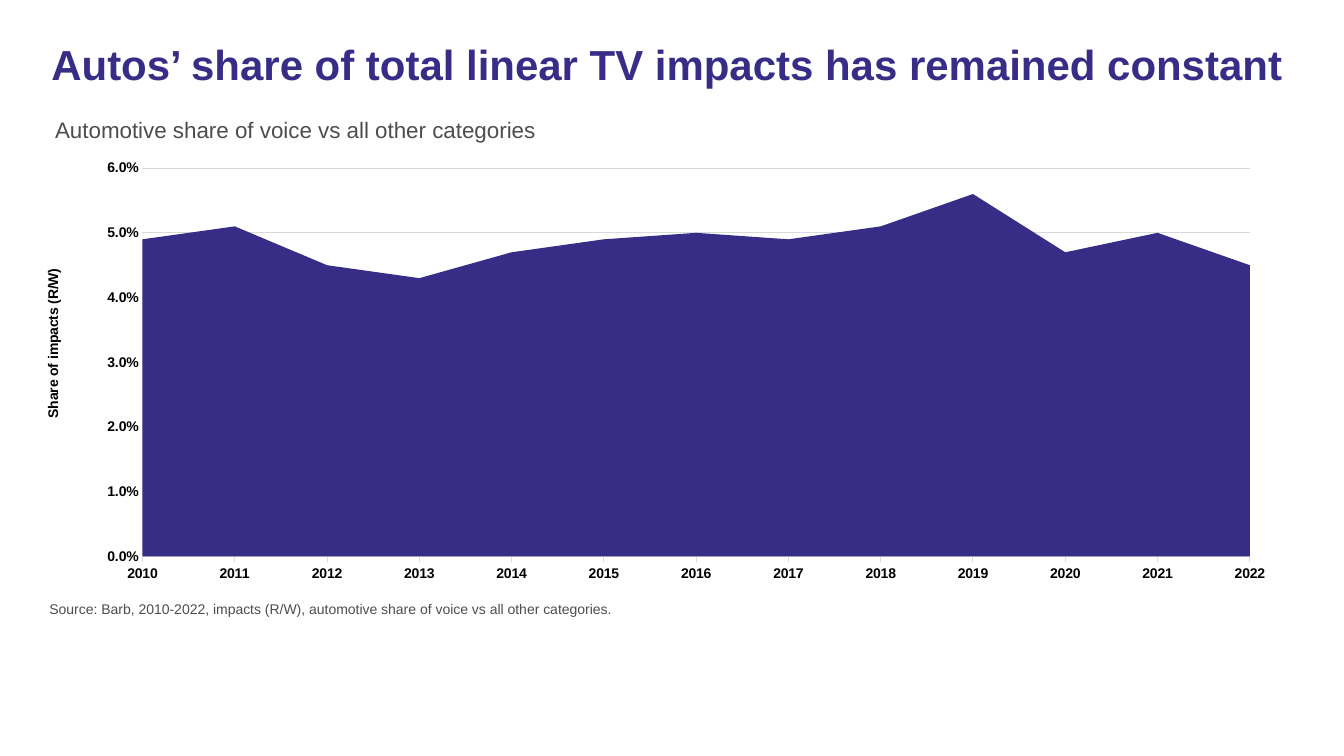
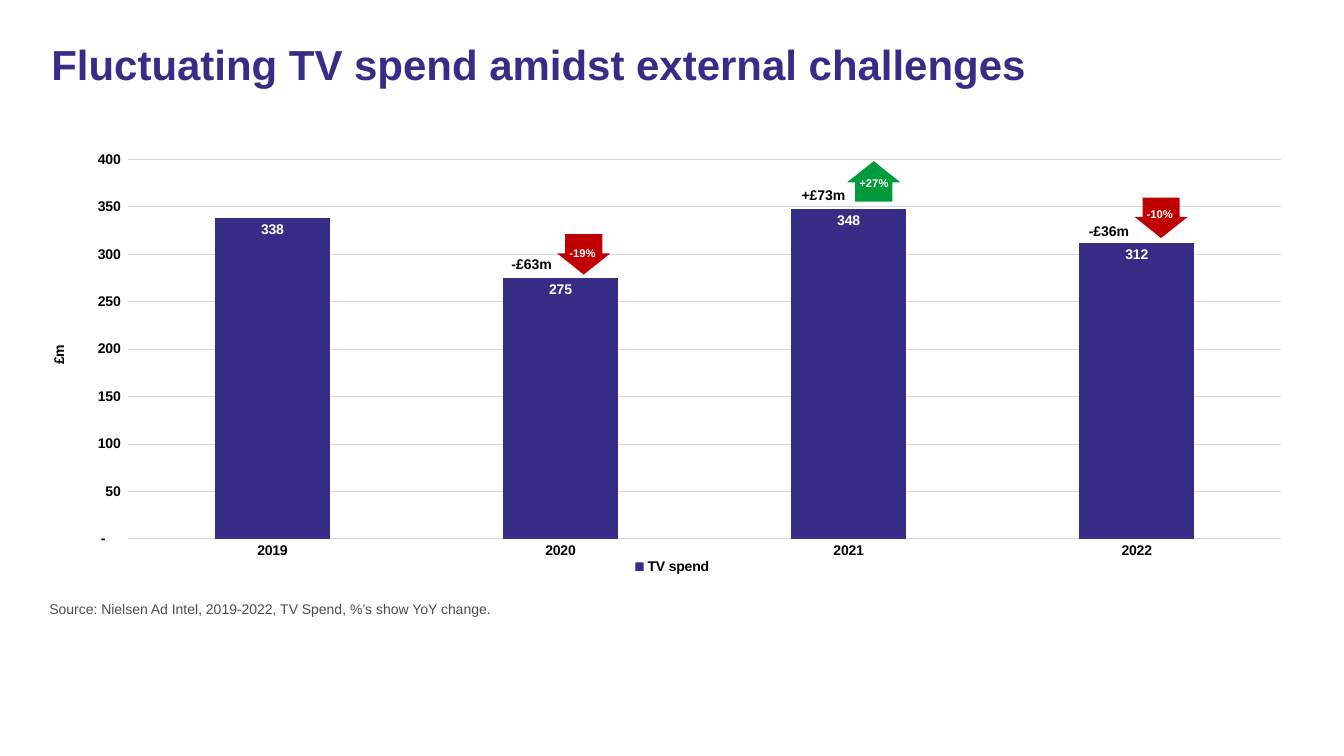
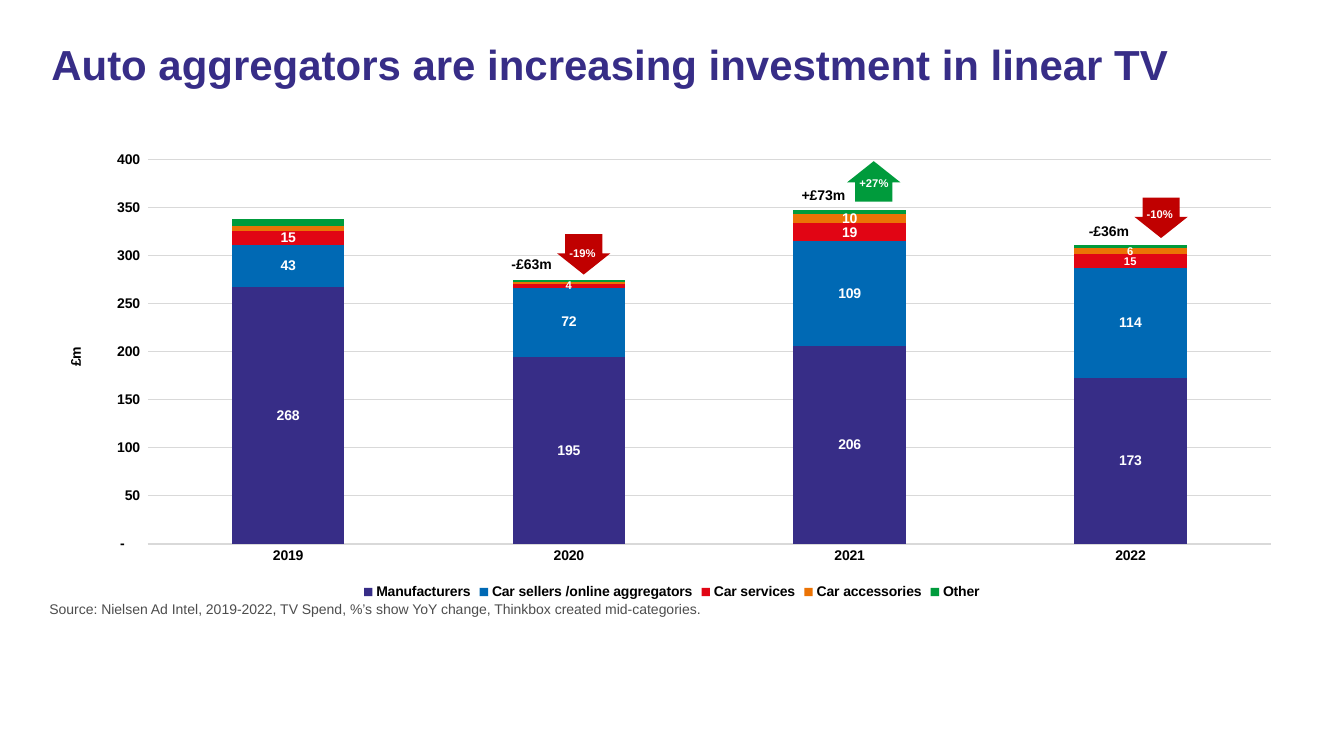
import pptx
import pptx.util
import pptx.chart.data
import pptx.dml.color
import pptx.enum.chart
import pptx.enum.shapes
import pptx.enum.text
import pptx.oxml
import pptx.oxml.ns

Cm, Pt = pptx.util.Cm, pptx.util.Pt
RGB = pptx.dml.color.RGBColor.from_string
KIND = pptx.enum.chart.XL_CHART_TYPE
SPOT = pptx.enum.chart.XL_LABEL_POSITION
TICK = pptx.enum.chart.XL_TICK_MARK


class Theme:
    face = "Arial"
    navy, blue, red, orange, green = "372D87", "0069B4", "E10514", "EB7305", "009B3C"
    fall, grey, rule, black, white = "C00000", "4D4D4D", "D9D9D9", "000000", "FFFFFF"
    title, sub, small, tiny = 30, 16, 10, 8


# Content: boxes in cm, plot area and axis title in percent of the chart
MONEY = r'_-* #,##0_-;\-* #,##0_-;_-* "-"??_-;_-@_'
YEARS = ["2019", "2020", "2021", "2022"]
# amount, share, arrow left, arrow top, amount top, share top
MOVES = [
    ("-£63m", "-19%", 14.1, 5.92, 6.32, 6.07),
    ("+£73m", "+27%", 21.41, 4.09, 4.57, 4.32),
    ("-£36m", "-10%", 28.65, 5, 5.49, 5.11),
]
# Series: name, colour, values, label position, points without a label, points with a small one
SLIDES = [
    dict(
        title="Autos’ share of total linear TV impacts has remained constant",
        sub="Automotive share of voice vs all other categories",
        source="Source: Barb, 2010-2022, impacts (R/W), automotive share of voice "
               "vs all other categories.",
        kind=KIND.AREA, box=(1.04, 3.84, 31.5, 11.07), plot=(8.1, 3.6, 88.6, 88.4),
        unit="Share of impacts (R/W)", spot=(0, 25.9),
        top=0.06, step=0.01, format="0.0%", tick=TICK.OUTSIDE,
        cats=[str(year) for year in range(2010, 2023)],
        series=[("Series 1", Theme.navy,
                 (0.049, 0.051, 0.045, 0.043, 0.047, 0.049, 0.05,
                  0.049, 0.051, 0.056, 0.047, 0.05, 0.045), None, (), ())],
    ),
    dict(
        title="Fluctuating TV spend amidst external challenges",
        source="Source: Nielsen Ad Intel, 2019-2022, TV Spend, %’s show YoY change.",
        kind=KIND.COLUMN_CLUSTERED, box=(1.19, 3.51, 31.5, 11.07),
        plot=(6.5, 4.6, 92.2, 86.4), unit="£m", spot=(0, 46.3),
        top=400, step=50, format=MONEY, tick=TICK.NONE, cats=YEARS,
        bars=dict(gap_width=150, overlap=-27), moves=MOVES,
        series=[("TV spend", Theme.navy, (338, 275, 348, 312), SPOT.INSIDE_END, (), ())],
    ),
    dict(
        title="Auto aggregators are increasing investment in linear TV",
        source="Source: Nielsen Ad Intel, 2019-2022, TV Spend, %’s show YoY change, "
               "Thinkbox created mid-categories.",
        kind=KIND.COLUMN_STACKED, box=(1.17, 3.61, 31.52, 11.61),
        plot=(8.1, 3.6, 89.8, 83.4), unit="£m", spot=(1.4, 43.7),
        top=400, step=50, format=MONEY, tick=TICK.NONE, cats=YEARS,
        bars=dict(gap_width=150, overlap=100), moves=MOVES,
        series=[
            ("Manufacturers", Theme.navy, (268, 195, 206, 173), SPOT.CENTER, (), ()),
            ("Car sellers /online aggregators", Theme.blue, (43, 72, 109, 114),
             SPOT.CENTER, (), ()),
            ("Car services", Theme.red, (15, 4, 19, 15), SPOT.CENTER, (), (1, 3)),
            ("Car accessories", Theme.orange, (5, 2, 10, 6), SPOT.CENTER, (0, 1), (3,)),
            ("Other", Theme.green, (7, 2, 4, 3), None, (), ()),
        ],
    ),
]


# Formatting helpers
def put(thing, **values):
    for key, value in values.items():
        setattr(thing, key, value)


def style(font, size, color, bold=False):
    put(font, name=Theme.face, size=Pt(size), bold=bold)
    font.color.rgb = RGB(color)


def place(shape, box):
    put(shape, **dict(zip(("left", "top", "width", "height"), map(Cm, box))))


def paint(fill, color):
    fill.solid()
    fill.fore_color.rgb = RGB(color)


def stroke(line, color, width):
    line.color.rgb = RGB(color)
    line.width = Pt(width)


def write(shape, text, size, color, bold=False, **layout):
    frame = shape.text_frame
    put(frame, text=text, word_wrap=True,
        auto_size=pptx.enum.text.MSO_AUTO_SIZE.NONE,
        vertical_anchor=pptx.enum.text.MSO_ANCHOR.TOP)
    para = frame.paragraphs[0]
    put(para, alignment=pptx.enum.text.PP_ALIGN.LEFT, space_before=Pt(0), **layout)
    style(para.runs[0].font, size, color, bold)
    return para


def label(shapes, text, box, size, color, bold=False):
    write(shapes.add_textbox(*map(Cm, box)), text, size, color, bold)


def xml(text):
    return pptx.oxml.parse_xml(text.replace(">", f" {pptx.oxml.ns.nsdecls('c')}>", 1))


def fix(parent, index, *parts):
    """Fix the place of a chart part, in percent of the chart."""
    old = parent.find(pptx.oxml.ns.qn("c:layout"))
    if old is not None:
        parent.remove(old)
    inner = '<c:layoutTarget val="inner"/>' if len(parts) == 4 else ""
    modes = '<c:xMode val="edge"/><c:yMode val="edge"/>'
    sizes = "".join(f'<c:{key} val="{part / 100:.4f}"/>' for key, part in zip("xywh", parts))
    parent.insert(index, xml(f"<c:layout><c:manualLayout>{inner}{modes}{sizes}"
                             "</c:manualLayout></c:layout>"))


# Chart
def graph(slide, page):
    data = pptx.chart.data.CategoryChartData(number_format=page["format"])
    data.categories = page["cats"]
    for name, _, values, *_ in page["series"]:
        data.add_series(name, values)
    chart = slide.shapes.add_chart(page["kind"], *map(Cm, page["box"]), data).chart
    put(chart, has_title=False, has_legend="bars" in page)
    style(chart.font, Theme.small, Theme.black, True)
    if chart.has_legend:
        put(chart.legend, position=pptx.enum.chart.XL_LEGEND_POSITION.BOTTOM,
            include_in_layout=False)
        style(chart.legend.font, Theme.small, Theme.black, True)

    # Axes
    cat, val = chart.category_axis, chart.value_axis
    put(cat, major_tick_mark=page["tick"], minor_tick_mark=TICK.NONE,
        has_major_gridlines=False)
    put(val, major_tick_mark=TICK.NONE, minor_tick_mark=TICK.NONE,
        has_major_gridlines=True, minimum_scale=0, maximum_scale=page["top"],
        major_unit=page["step"])
    put(val.tick_labels, number_format=page["format"], number_format_is_linked=False)
    for axis in (cat, val):
        style(axis.tick_labels.font, Theme.small, Theme.black, True)
    for line in (cat.format.line, val.major_gridlines.format.line):
        stroke(line, Theme.rule, 0.75)
    val.format.line.fill.background()
    head = val.axis_title
    head.text_frame.text = page["unit"]
    style(head.text_frame.paragraphs[0].runs[0].font, Theme.small, Theme.black, True)
    turn = head._element.xpath(".//a:bodyPr")[0]
    turn.set("rot", "-5400000")
    turn.set("vert", "horz")
    fix(head._element, 1, *page["spot"])
    fix(chart._chartSpace.chart.plotArea, 0, *page["plot"])

    # Series
    plot = chart.plots[0]
    put(plot, vary_by_categories=False, **page.get("bars", {}))
    for row, (_, color, _, spot, hide, shrink) in zip(plot.series, page["series"]):
        paint(row.format.fill, color)
        if spot is None:
            continue
        tags = row.data_labels
        put(tags, show_value=True, position=spot, number_format=page["format"],
            number_format_is_linked=False)
        style(tags.font, Theme.small, Theme.white, True)
        for index in reversed(hide):
            tags._element.insert(0, xml(f'<c:dLbl><c:idx val="{index}"/>'
                                        '<c:delete val="1"/></c:dLbl>'))
        # Smaller labels keep clear of each other in thin segments
        for index in shrink:
            tag = row.points[index].data_label
            style(tag.font, Theme.tiny, Theme.white, True)
            tag.position = spot


# Yearly change: amount, arrow and share in one group
def move(slide, amount, share, left, top, low, mid):
    shapes = slide.shapes.add_group_shape().shapes
    label(shapes, amount, (left - 1.46, low, 1.88, 0.69), Theme.small, Theme.black, True)
    arrow = shapes.add_shape(pptx.enum.shapes.MSO_SHAPE.UP_ARROW,
                             *map(Cm, (left, top, 1.22, 0.97)))
    rise = share.startswith("+")
    color = Theme.green if rise else Theme.fall
    arrow.adjustments[0], arrow.adjustments[1] = 0.73, 0.5
    arrow.rotation = 0 if rise else 180
    arrow.shadow.inherit = False
    paint(arrow.fill, color)
    stroke(arrow.line, color, 1.25)
    edge = arrow.line._get_or_add_ln()
    edge.append(edge.makeelement(pptx.oxml.ns.qn("a:miter"), {"lim": "800000"}))
    label(shapes, share, (left, mid, 2.44, 0.61), Theme.tiny, Theme.white, True)


def main():
    deck = pptx.Presentation()
    put(deck, slide_width=Cm(33.87), slide_height=Cm(19.05))

    # Shared places of title and source line
    base = deck.slide_layouts[1]
    place(base.placeholders[0], (1.04, 0.99, 31.8, 2.84))
    place(base.placeholders[1], (0.99, 15.01, 31.5, 0.84))

    for page in SLIDES:
        slide = deck.slides.add_slide(base)
        write(slide.shapes.title, page["title"], Theme.title, Theme.navy, True,
              line_spacing=0.9)
        para = write(slide.placeholders[1], page["source"], Theme.small, Theme.grey)
        props = para._p.get_or_add_pPr()
        props.set("marL", "0")
        props.set("indent", "0")
        props.append(props.makeelement(pptx.oxml.ns.qn("a:buNone"), {}))
        graph(slide, page)
        if "sub" in page:
            label(slide.shapes, page["sub"], (1.14, 2.79, 14, 0.94), Theme.sub, Theme.grey)
        for item in page.get("moves", ()):
            move(slide, *item)
    deck.save("out.pptx")


if __name__ == "__main__":
    main()
